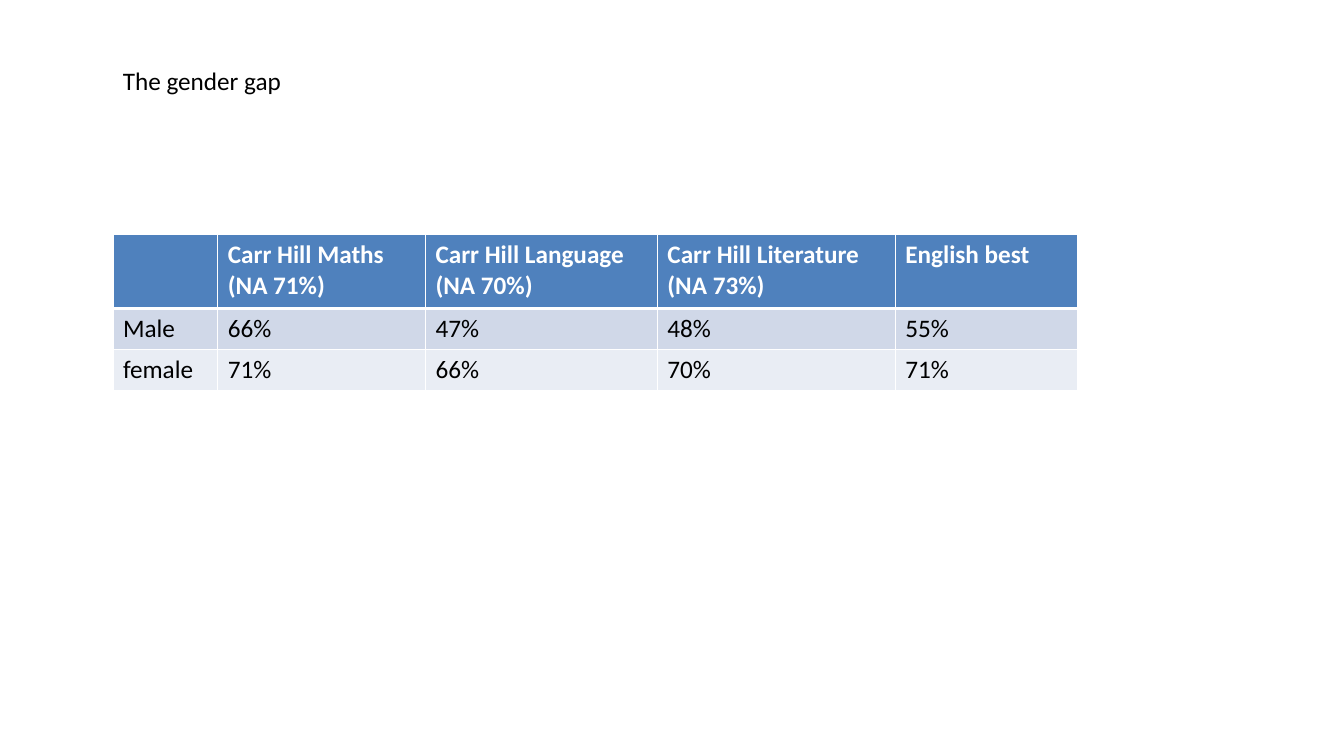
from lxml.etree import SubElement
from pptx import Presentation
from pptx.dml.color import RGBColor as RGB
from pptx.enum.text import MSO_AUTO_SIZE as AutoSize
from pptx.oxml.ns import qn
from pptx.util import Inches, Pt

BLACK = RGB(0x00, 0x00, 0x00)
WHITE = RGB(0xFF, 0xFF, 0xFF)
BLUE = RGB(0x4F, 0x81, 0xBD)
MID_BLUE = RGB(0xD0, 0xD8, 0xE8)
PALE_BLUE = RGB(0xE9, 0xED, 0xF4)

ROW_FILLS = [BLUE, MID_BLUE, PALE_BLUE]
COL_WIDTHS = [1.04, 2.06, 2.3, 2.36, 1.81]
ROW_HEIGHTS = [0.73, 0.41, 0.41]
RESULTS = [
    ["", "Carr Hill Maths\n(NA 71%)", "Carr Hill Language\n(NA 70%)",
     "Carr Hill Literature\n(NA 73%)", "English best"],
    ["Male", "66%", "47%", "48%", "55%"],
    ["female", "71%", "66%", "70%", "71%"],
]


def format_text(tf, color, bold=False):
    for p in tf.paragraphs:
        p.font.size = Pt(18)
        for r in p.runs:
            r.font.name = "Calibri"
            r.font.size = Pt(18)
            r.font.bold = bold
            r.font.color.rgb = color


def add_borders(cell, widths):
    tcPr = cell._tc.get_or_add_tcPr()
    for side, width in widths.items():
        ln = SubElement(tcPr, qn(f"a:ln{side}"), w=str(Pt(width)))
        fill = SubElement(ln, qn("a:solidFill"))
        SubElement(fill, qn("a:srgbClr"), val=str(WHITE))


def add_title(slide, left, top, width, height):
    box = slide.shapes.add_textbox(
        Inches(left), Inches(top), Inches(width), Inches(height))
    tf = box.text_frame
    tf.word_wrap = True
    tf.auto_size = AutoSize.SHAPE_TO_FIT_TEXT
    tf.text = "The gender gap"
    format_text(tf, BLACK)


def add_results(slide, left, top, width, height):
    table = slide.shapes.add_table(
        len(RESULTS), len(COL_WIDTHS),
        Inches(left), Inches(top), Inches(width), Inches(height)).table
    for col, col_width in zip(table.columns, COL_WIDTHS):
        col.width = Inches(col_width)
    for row, row_height in zip(table.rows, ROW_HEIGHTS):
        row.height = Inches(row_height)
    for i, values in enumerate(RESULTS):
        header = i == 0
        widths = {"L": 1, "R": 1, "T": 3 if i == 1 else 1, "B": 3 if header else 1}
        for j, value in enumerate(values):
            cell = table.cell(i, j)
            cell.text_frame.text = value
            format_text(cell.text_frame, WHITE if header else BLACK, header)
            add_borders(cell, widths)
            cell.fill.solid()
            cell.fill.fore_color.rgb = ROW_FILLS[i]


def main():
    prs = Presentation()
    prs.slide_width = Inches(13.33)
    prs.slide_height = Inches(7.5)
    slide = prs.slides.add_slide(prs.slide_layouts[6])
    add_title(slide, 1.12, 0.6, 5.94, 0.4)
    add_results(slide, 1.12, 2.33, sum(COL_WIDTHS), sum(ROW_HEIGHTS))
    prs.save("out.pptx")


if __name__ == "__main__":
    main()
